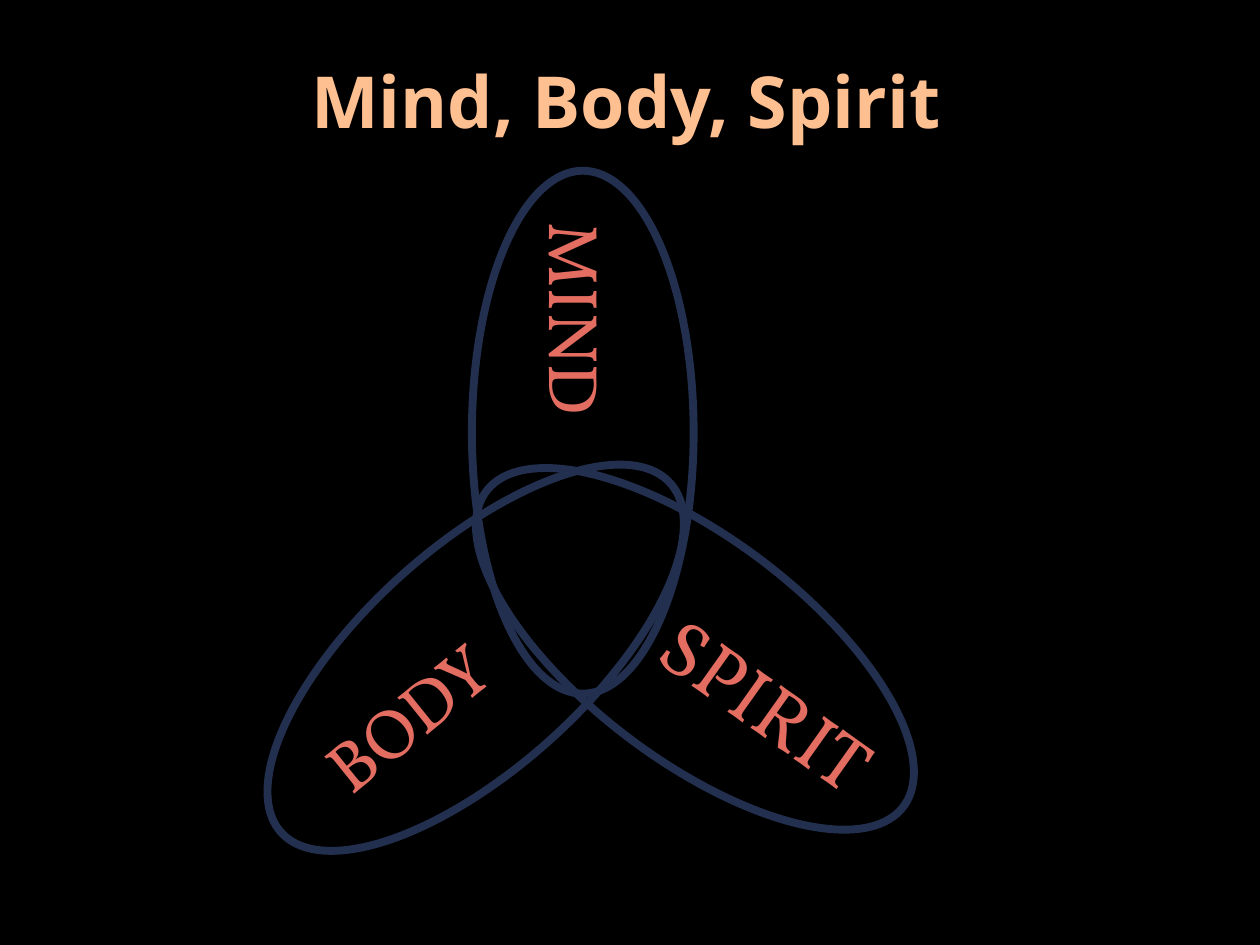
"""Build a slide with three overlapping ellipses for mind, body and spirit."""
from dataclasses import dataclass

from pptx import Presentation
from pptx.dml.color import RGBColor
from pptx.enum import shapes, text
from pptx.util import Inches, Pt

BLACK, PEACH, CORAL, NAVY = "000000", "FFC091", "E36D61", "232F4E"


@dataclass
class Label:
    words: str
    left: float
    top: float
    width: float
    height: float
    rotation: float
    size: int = 40


@dataclass
class Petal:
    left: float
    top: float
    rotation: float
    width: float = 4.15
    height: float = 1.76


LABELS = [
    Label("MIND", 3.27, 2.59, 2.62, 0.77, 90),
    Label("BODY", 2.35, 5.2, 2, 0.77, 321),
    Label("SPIRIT", 5.03, 5.24, 2.35, 0.84, 35.4, 44),
]
PETALS = [Petal(2.55, 2.55, 90), Petal(1.7, 4.34, 138.1), Petal(3.44, 4.27, 37.1)]


def paint(target, color: str) -> None:
    """Give a fill or font one solid colour."""
    fill = target.fill
    fill.solid()
    fill.fore_color.rgb = RGBColor.from_string(color)


def style(para, name: str, size: int, color: str) -> None:
    """Set the font of a whole paragraph."""
    para.font.name = name
    para.font.size = Pt(size)
    paint(para.font, color)


def add_title(page, words: str) -> None:
    """Place and format the title placeholder."""
    title = page.shapes.title
    title.left, title.top = Inches(0.47), Inches(0.17)
    title.width, title.height = Inches(9), Inches(1.25)
    title.text_frame.text = words
    title.text_frame.vertical_anchor = text.MSO_ANCHOR.MIDDLE
    para = title.text_frame.paragraphs[0]
    para.alignment = text.PP_ALIGN.CENTER
    style(para, "Open Sans", 41, PEACH)
    para.font.bold = True


def add_label(page, label: Label) -> None:
    """Write one rotated word."""
    box = page.shapes.add_textbox(
        Inches(label.left), Inches(label.top), Inches(label.width), Inches(label.height)
    )
    box.rotation = label.rotation
    frame = box.text_frame
    frame.word_wrap = True
    frame.auto_size = text.MSO_AUTO_SIZE.SHAPE_TO_FIT_TEXT
    frame.text = label.words
    style(frame.paragraphs[0], "Vollkorn", label.size, CORAL)


def add_petal(page, petal: Petal) -> None:
    """Draw one rotated, unfilled ellipse."""
    oval = page.shapes.add_shape(
        shapes.MSO_SHAPE.OVAL,
        Inches(petal.left), Inches(petal.top), Inches(petal.width), Inches(petal.height),
    )
    oval.rotation = petal.rotation
    oval.shadow.inherit = False
    oval.fill.background()
    oval.line.width = Pt(4.5)
    paint(oval.line, NAVY)


def main() -> None:
    """Build and save the deck."""
    deck = Presentation()
    deck.slide_width, deck.slide_height = Inches(10), Inches(7.5)
    page = deck.slides.add_slide(deck.slide_layouts.get_by_name("Title Only"))
    paint(page.background, BLACK)
    add_title(page, "Mind, Body, Spirit")
    for label in LABELS:
        add_label(page, label)
    for petal in PETALS:
        add_petal(page, petal)
    deck.save("out.pptx")


if __name__ == "__main__":
    main()
